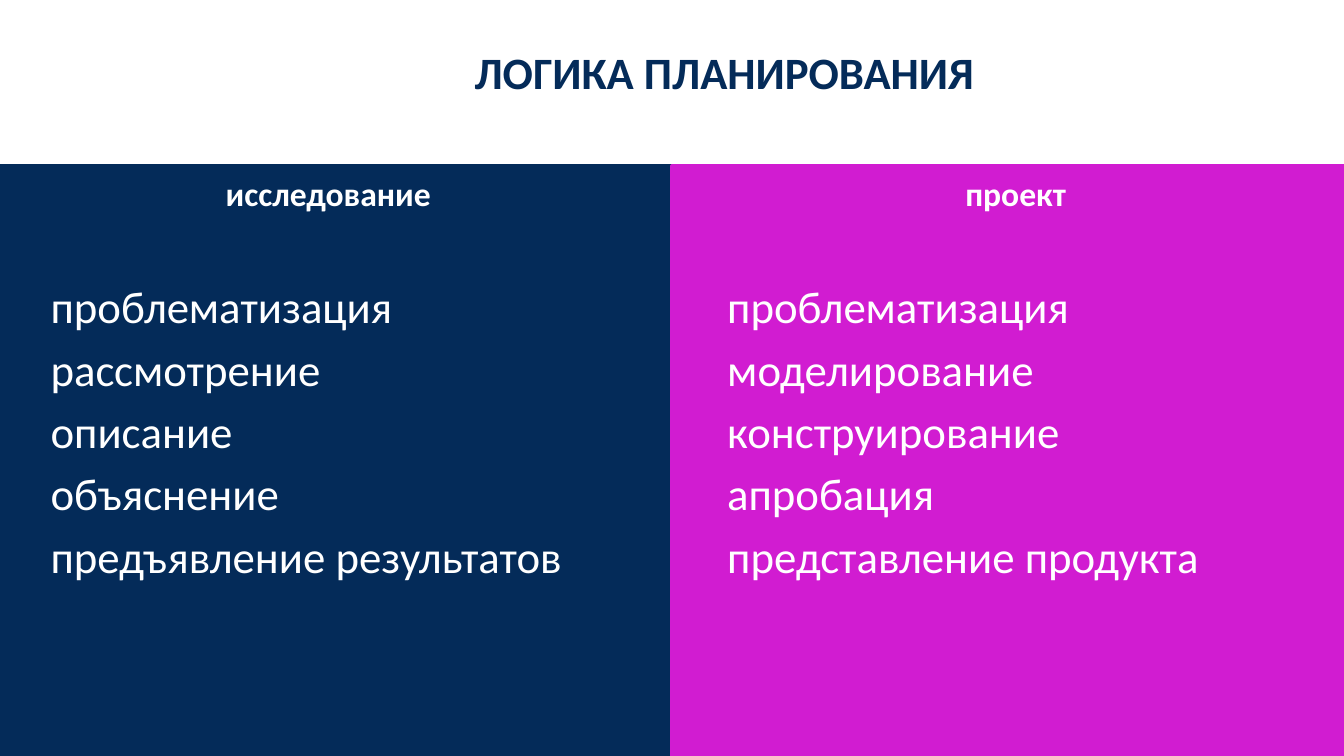
from pptx import Presentation
from pptx.dml.color import RGBColor
from pptx.enum import shapes, text
from pptx.util import Pt

# Content
TITLE = "ЛОГИКА ПЛАНИРОВАНИЯ"
COLUMNS = [
    {"heading": "исследование", "fill": "navy",
     "steps": ["проблематизация", "рассмотрение", "описание",
               "объяснение", "предъявление результатов"]},
    {"heading": "проект", "fill": "magenta",
     "steps": ["проблематизация", "моделирование", "конструирование",
               "апробация", "представление продукта"]},
]

# Style
COLORS = {"navy": "042B59", "magenta": "D11CD1", "white": "FFFFFF"}
FONT = "Calibri"
TITLE_SIZE, HEADING_SIZE, STEP_SIZE = 24, 18, 24
STEP_GAP = 4.6

# Layout in points: the two panels split the slide width
SLIDE_WIDTH, SLIDE_HEIGHT = 720, 405
TITLE_AREA = (76.3, 16.2, 623.5, 44.6)
PANEL_TOP = 89
PANEL_WIDTH = SLIDE_WIDTH / len(COLUMNS)
PANEL_HEIGHT = SLIDE_HEIGHT - PANEL_TOP
HEADING_WIDTH, HEADING_HEIGHT = 311.8, 29.1
STEPS_TOP, STEPS_WIDTH, STEPS_HEIGHT = 146, 318.2, 226.8
# Distance of each column's text from the left edge of its panel
HEADING_INSETS = (20, 28.2)
STEPS_INSETS = (20, 22.5)


def color(name):
    return RGBColor.from_string(COLORS[name])


def write(frame, lines, size, ink, bold=False, align=text.PP_ALIGN.LEFT, gap=0):
    frame.word_wrap = True
    frame.text = "\n".join(lines)
    for index, para in enumerate(frame.paragraphs):
        para.alignment = align
        para.space_before = Pt(gap if index else 0)
        for span in para.runs:
            span.font.name = FONT
            span.font.size = Pt(size)
            span.font.bold = bold
            span.font.color.rgb = color(ink)


def add_title(page):
    title = page.shapes.title
    title.left, title.top, title.width, title.height = map(Pt, TITLE_AREA)
    title.text_frame.vertical_anchor = text.MSO_ANCHOR.MIDDLE
    write(title.text_frame, [TITLE], TITLE_SIZE, "navy",
          bold=True, align=text.PP_ALIGN.CENTER)


def add_panel(page, left, fill):
    area = (left, PANEL_TOP, PANEL_WIDTH, PANEL_HEIGHT)
    panel = page.shapes.add_shape(shapes.MSO_SHAPE.RECTANGLE, *map(Pt, area))
    panel.shadow.inherit = False
    panel.fill.solid()
    panel.fill.fore_color.rgb = color(fill)
    panel.line.color.rgb = color(fill)
    panel.line.width = Pt(2)


def add_text(page, area, lines, size, **style):
    box = page.shapes.add_textbox(*map(Pt, area))
    write(box.text_frame, lines, size, "white", **style)


def main():
    deck = Presentation()
    deck.slide_width, deck.slide_height = Pt(SLIDE_WIDTH), Pt(SLIDE_HEIGHT)
    page = deck.slides.add_slide(deck.slide_layouts[5])
    add_title(page)

    # One panel per column, with its heading and steps
    for index, column in enumerate(COLUMNS):
        left = index * PANEL_WIDTH
        add_panel(page, left, column["fill"])
        add_text(page, (left + STEPS_INSETS[index], STEPS_TOP, STEPS_WIDTH, STEPS_HEIGHT),
                 column["steps"], STEP_SIZE, gap=STEP_GAP)
        add_text(page, (left + HEADING_INSETS[index], PANEL_TOP, HEADING_WIDTH, HEADING_HEIGHT),
                 [column["heading"]], HEADING_SIZE, bold=True, align=text.PP_ALIGN.CENTER)

    deck.save("out.pptx")


if __name__ == "__main__":
    main()
